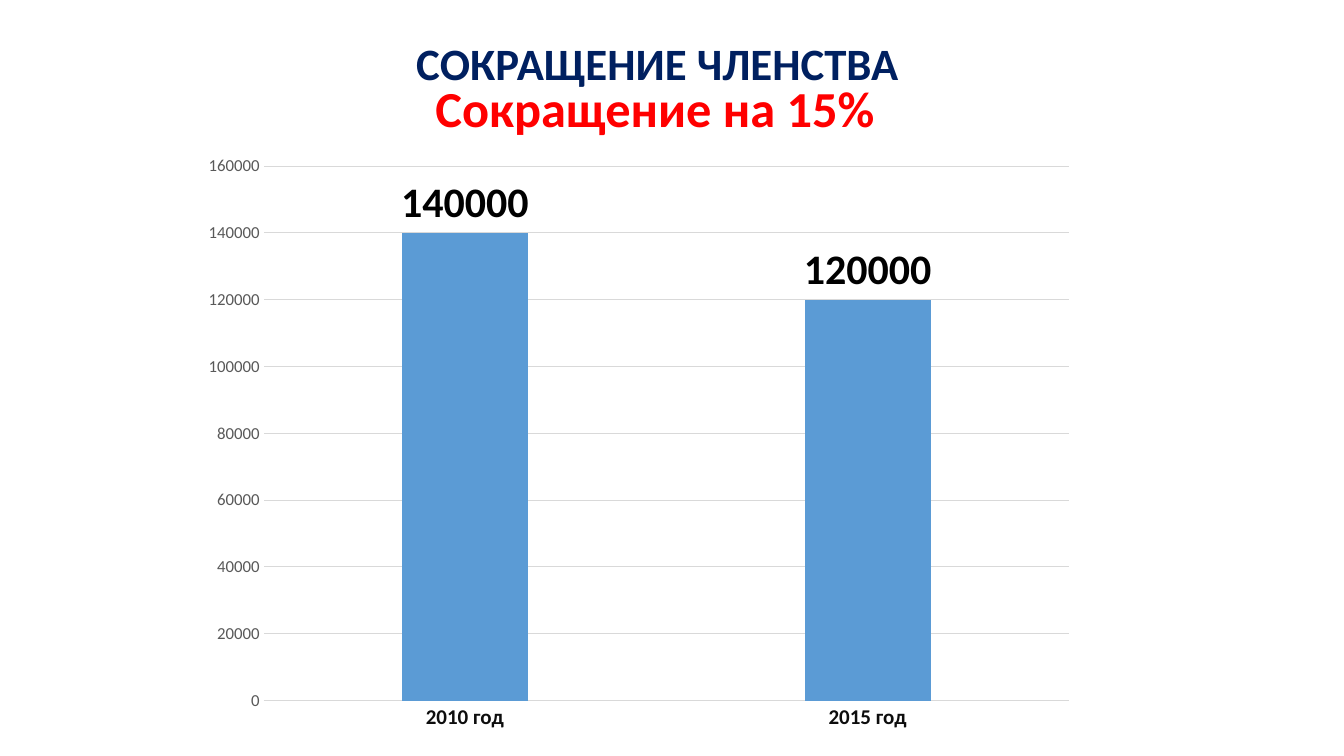
from dataclasses import dataclass

from pptx import Presentation
from pptx.chart.data import CategoryChartData
from pptx.dml.color import RGBColor
from pptx.enum.chart import XL_CHART_TYPE as ChartType
from pptx.enum.chart import XL_LABEL_POSITION as LabelPos
from pptx.enum.chart import XL_TICK_MARK as Tick
from pptx.util import Inches, Pt

MEMBERS = {"2010 год": 140000, "2015 год": 120000}
CHART_BOX = (1.89, 1.43, 8.89, 5.93)


@dataclass(frozen=True)
class Theme:
    font: str = "Calibri"
    navy: str = "002060"
    red: str = "FF0000"
    bar: str = "5B9BD5"
    grid: str = "D9D9D9"
    black: str = "000000"
    category: str = "0D0D0D"
    value: str = "595959"
    title_size: int = 32
    subtitle_size: int = 36
    label_size: int = 30
    category_size: int = 15
    value_size: int = 12
    base_size: int = 10


T = Theme()
HEADINGS = [
    ("Сокращение на 15%", (4.22, 0.72, 5.34, 0.71), T.subtitle_size, T.red),
    ("СОКРАЩЕНИЕ ЧЛЕНСТВА", (4.03, 0.31, 9.57, 0.94), T.title_size, T.navy),
]


def set_font(font, size, color, bold=False):
    font.name, font.size, font.bold = T.font, Pt(size), bold
    font.color.rgb = RGBColor.from_string(color)


def set_line(line, color):
    line.width = Pt(0.75)
    line.color.rgb = RGBColor.from_string(color)


def add_text(slide, text, box, *, size, color, bold=True):
    tf = slide.shapes.add_textbox(*map(Inches, box)).text_frame
    tf.word_wrap = True
    r = tf.paragraphs[0].add_run()
    r.text = text
    set_font(r.font, size, color, bold)


def add_member_chart(slide):
    data = CategoryChartData(number_format="General")
    data.categories = list(MEMBERS)
    data.add_series("Series 1", list(MEMBERS.values()))
    chart = slide.shapes.add_chart(
        ChartType.COLUMN_CLUSTERED, *map(Inches, CHART_BOX), data).chart
    chart.has_legend = chart.has_title = False
    set_font(chart.font, T.base_size, T.black)

    plot = chart.plots[0]
    plot.gap_width, plot.overlap, plot.vary_by_categories = 219, -27, False
    series = plot.series[0]
    series.format.fill.solid()
    series.format.fill.fore_color.rgb = RGBColor.from_string(T.bar)
    labels = series.data_labels
    labels.show_value, labels.position = True, LabelPos.OUTSIDE_END
    set_font(labels.font, T.label_size, T.black, bold=True)

    cat, val = chart.category_axis, chart.value_axis
    for axis in (cat, val):
        axis.major_tick_mark = axis.minor_tick_mark = Tick.NONE
    set_font(cat.tick_labels.font, T.category_size, T.category, bold=True)
    set_line(cat.format.line, T.grid)
    set_font(val.tick_labels.font, T.value_size, T.value)
    val.minimum_scale = 0
    val.format.line.fill.background()
    set_line(val.major_gridlines.format.line, T.grid)


def main():
    prs = Presentation()
    prs.slide_width, prs.slide_height = Inches(13.33), Inches(7.5)
    slide = prs.slides.add_slide(prs.slide_layouts[6])
    add_member_chart(slide)
    for text, box, size, color in HEADINGS:
        add_text(slide, text, box, size=size, color=color)
    prs.save("out.pptx")


if __name__ == "__main__":
    main()
